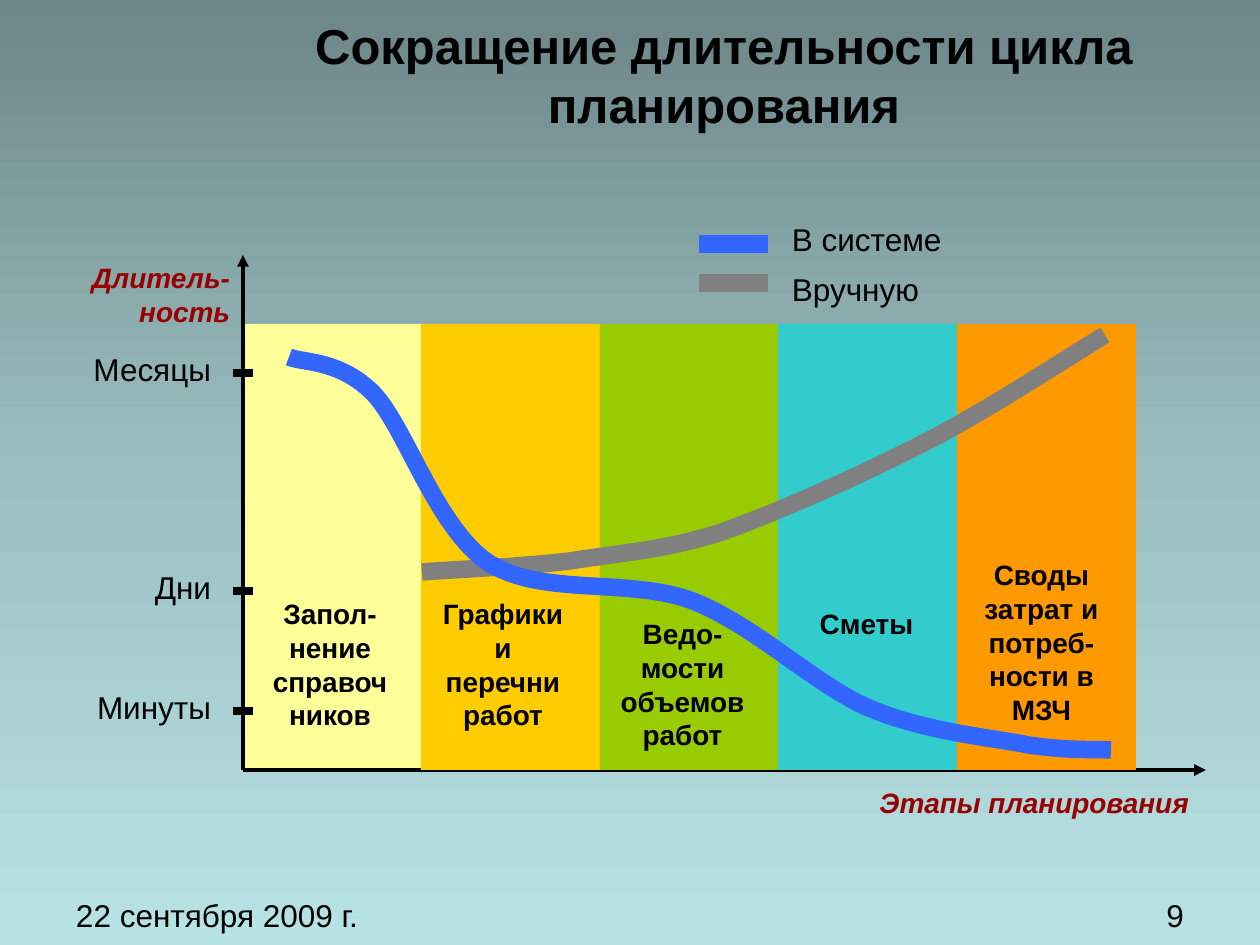
from pptx import Presentation
from pptx.dml.color import RGBColor
from pptx.enum.shapes import MSO_CONNECTOR as LINE, MSO_SHAPE as SHAPE
from pptx.enum.text import MSO_ANCHOR as ANCHOR, MSO_AUTO_SIZE as AUTO, PP_ALIGN as ALIGN
from pptx.oxml.ns import qn
from pptx.util import Pt
from lxml.etree import SubElement as Sub

PX = 914400 / 126
BLUE, GRAY, RED, BLACK = "3366FF", "808080", "990000", "000000"
BANDS = [
    ("FFFF99", "Запол-нение справочников", (20, 267, 134, 147)),
    ("FFCC00", "Графики и перечни работ", (10, 267, 144, 147)),
    ("99CC00", "Ведо-мости объемов работ", (9, 287, 147, 147)),
    ("33CCCC", "Сметы", (20, 277, 137, 47)),
    ("FF9900", "Своды затрат и потреб-ности в МЗЧ", (10, 228, 149, 181)),
]
TICKS = [("Месяцы", 49), ("Дни", 267), ("Минуты", 387)]
HAND = [(179, 248), (203, 246), (276, 243), (327, 237), (376, 229),
        (420, 227), (479, 208), (538, 187), (616, 152), (679, 120),
        (744, 87), (824, 34), (862, 11)]
AUTOM = [(46, 33), (59, 39), (96, 35), (130, 69), (163, 103), (193, 204),
         (246, 239), (300, 273), (386, 253), (450, 277), (513, 302),
         (571, 360), (626, 384), (683, 408), (746, 413), (786, 421),
         (827, 427), (852, 425), (868, 426)]


def emu(*vals):
    """Turn px into EMU."""
    return [round(v * PX) for v in vals]


def rgb(code):
    """Make a colour from a hex string."""
    return RGBColor.from_string(code)


def text(slide, box, words, size=18, color=BLACK, bold=False, italic=False,
         align=ALIGN.LEFT, anchor=ANCHOR.TOP, pad=(5, 6), grow=True):
    """Place a wrapped text box."""
    frame = slide.shapes.add_textbox(*emu(*box)).text_frame
    frame.word_wrap = True
    frame.auto_size = AUTO.SHAPE_TO_FIT_TEXT if grow else AUTO.NONE
    frame.vertical_anchor = anchor
    side, top = emu(*pad)
    frame.margin_left = frame.margin_right = side
    frame.margin_top = frame.margin_bottom = top
    para = frame.paragraphs[0]
    para.alignment = align
    run = para.add_run()
    run.text = words
    font = run.font
    font.name, font.size, font.bold, font.italic = "Arial", Pt(size), bold, italic
    font.color.rgb = rgb(color)


def line(slide, ends, color=BLACK, width=2.25, arrow=False):
    """Draw a straight line, with an arrowhead if asked."""
    link = slide.shapes.add_connector(LINE.STRAIGHT, *emu(*ends))
    link.line.color.rgb = rgb(color)
    link.line.width = Pt(width)
    if arrow:
        Sub(link.line._get_or_add_ln(), qn("a:tailEnd"), type="triangle")
    Sub(link._element.spPr, qn("a:effectLst"))


def curve(slide, x, y, dots, color):
    """Draw a chain of cubic curves through every third dot."""
    spots = [(x + a, y + b) for a, b in dots]
    pen = slide.shapes.build_freeform(*spots[0], scale=PX)
    pen.add_line_segments(spots[1:], close=False)
    shape = pen.convert_to_shape()
    shape.shadow.inherit = False
    shape.fill.background()
    shape.line.color.rgb = rgb(color)
    shape.line.width = Pt(10)
    steps = shape._element.xpath(".//a:lnTo")
    for i in range(0, len(steps), 3):
        bend = Sub(steps[i].getparent(), qn("a:cubicBezTo"))
        for step in steps[i:i + 3]:
            bend.append(step[0])
            step.getparent().remove(step)


def band(slide, box, color):
    """Fill one stage band."""
    shape = slide.shapes.add_shape(SHAPE.RECTANGLE, *emu(*box))
    shape.shadow.inherit = False
    shape.fill.solid()
    shape.fill.fore_color.rgb = rgb(color)
    shape.line.fill.background()


def axes(slide, box):
    """Draw both axes with their names and ticks."""
    x, y, w, h = box
    line(slide, (x, y + h, x, y - 69), arrow=True)
    line(slide, (x, y + h, x + w + 70, y + h), arrow=True)
    name = dict(size=16, color=RED, bold=True, italic=True, align=ALIGN.RIGHT)
    text(slide, (x - 218, y - 69, 208, 81), "Длитель-ность", pad=(3, 6), **name)
    text(slide, (x + 576, y + h + 10, 375, 47), "Этапы планирования", **name)
    for words, dy in TICKS:
        text(slide, (x - 198, y + dy - 29, 169, 50), words,
             align=ALIGN.RIGHT, pad=(3, 6))
        line(slide, (x - 10, y + dy, x + 10, y + dy), width=5)


def chart(slide, box):
    """Draw bands, axes, curves and stage names."""
    x, y, w, h = box
    lefts = [x + i * w // len(BANDS) for i in range(len(BANDS) + 1)]
    for i, (color, _, _) in enumerate(BANDS):
        band(slide, (lefts[i], y, lefts[i + 1] - lefts[i], h), color)
        if i == 0:
            axes(slide, box)
    curve(slide, x, y, HAND, GRAY)
    curve(slide, x, y, AUTOM, BLUE)
    for left, (_, words, (dx, dy, wide, high)) in zip(lefts, BANDS):
        text(slide, (left + dx, y + dy, wide, high), words, size=16,
             bold=True, align=ALIGN.CENTER)


def legend(slide, box):
    """Draw the key to both curves."""
    x, y, w, h = box
    for words, color, dy, top in (("В системе", BLUE, 30, 0),
                                  ("Вручную", GRAY, 69, 50)):
        line(slide, (x, y + dy, x + 69, y + dy), color, 10)
        text(slide, (x + 90, y + top, w - 90, h - 50), words, pad=(3, 6))


def frame(slide, box):
    """Set the backdrop, title, date and page number."""
    x, y, w, h = box
    fill = slide.background.fill
    fill.gradient()
    fill.gradient_angle = 270
    stops = fill._fill._gradFill.find(qn("a:gsLst"))
    for stop in list(stops):
        stops.remove(stop)
    for pos, code in ((0, "6D8688"), (50, "9BBFC2"), (100, "B8E3E6")):
        stop = Sub(stops, qn("a:gs"), pos=str(pos * 1000))
        Sub(stop, qn("a:srgbClr"), val=code)
    wide = dict(pad=(13, 6), grow=False)
    text(slide, (x + 213, y + 26, w - 238, 97),
         "Сокращение длительности цикла планирования", size=28, bold=True,
         align=ALIGN.CENTER, anchor=ANCHOR.MIDDLE, **wide)
    text(slide, (x + 63, y + h - 55, 369, 37), "22 сентября 2009 г.", **wide)
    text(slide, (x + w - 203, y + h - 55, 140, 37), "9", align=ALIGN.RIGHT, **wide)


def main():
    """Build and save the slide."""
    deck = Presentation()
    deck.slide_width, deck.slide_height = emu(1260, 945)
    slide = deck.slides.add_slide(deck.slide_layouts[6])
    frame(slide, (0, 0, 1260, 945))
    chart(slide, (243, 324, 893, 446))
    legend(slide, (699, 214, 259, 100))
    deck.save("out.pptx")


if __name__ == "__main__":
    main()
